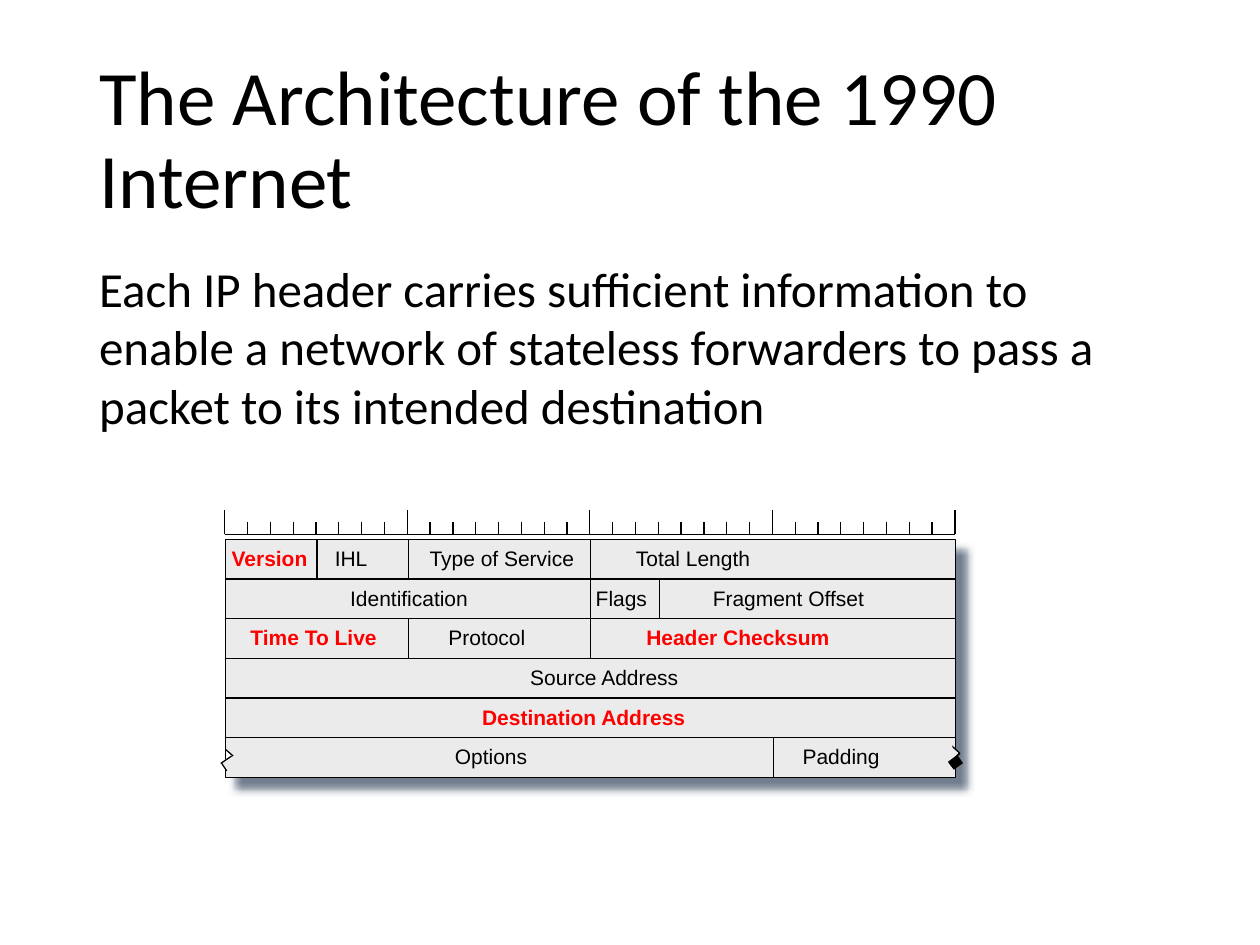
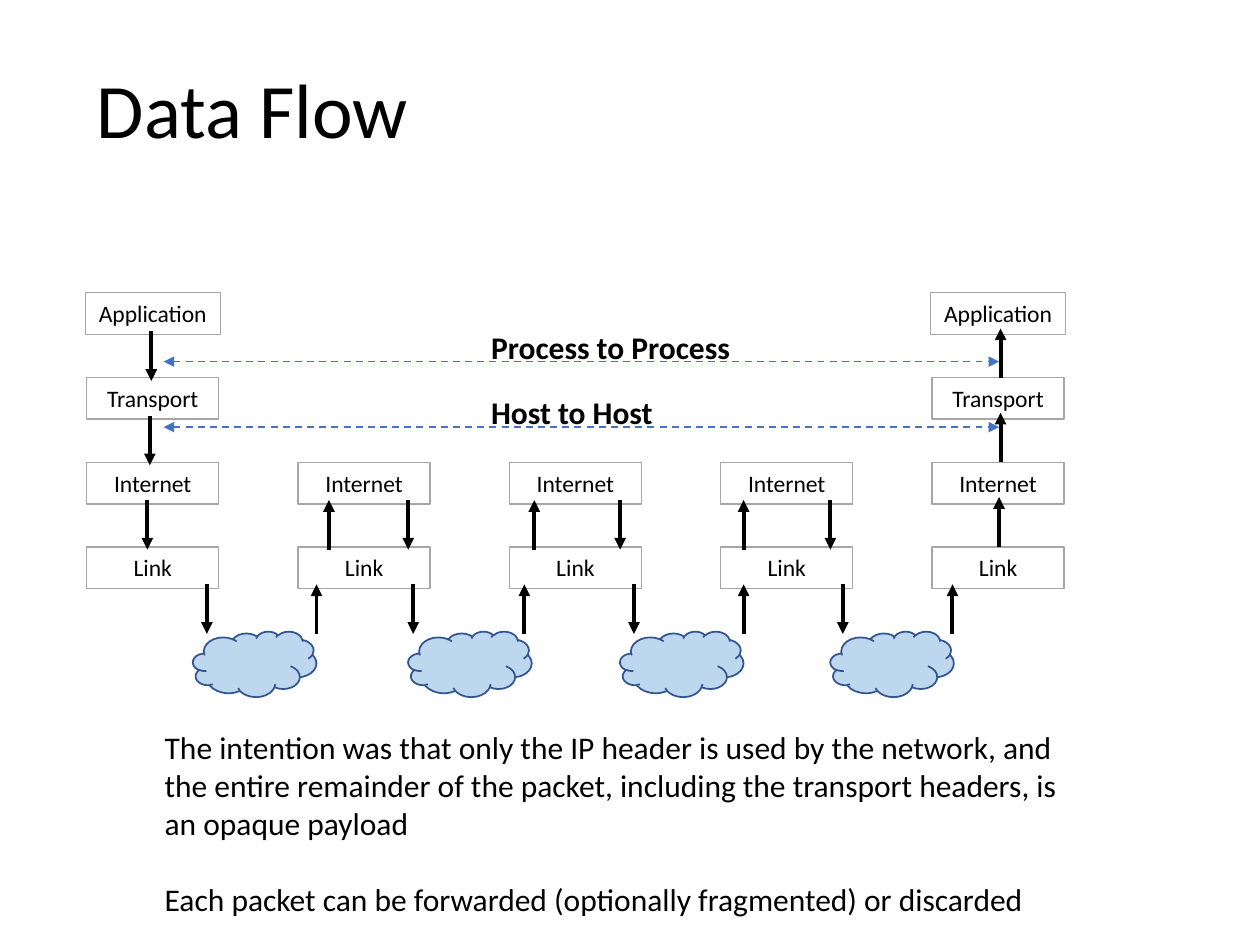
from dataclasses import dataclass

from lxml import etree
from pptx import Presentation
from pptx.dml.color import RGBColor
from pptx.enum.dml import MSO_LINE
from pptx.enum.shapes import MSO_CONNECTOR, MSO_SHAPE
from pptx.enum.text import MSO_ANCHOR, MSO_AUTO_SIZE, PP_ALIGN
from pptx.oxml.ns import qn
from pptx.util import Cm, Pt

RECT, CLOUD, WEDGE = MSO_SHAPE.RECTANGLE, MSO_SHAPE.CLOUD, MSO_SHAPE.RIGHT_TRIANGLE
STRAIGHT, DASH = MSO_CONNECTOR.STRAIGHT, MSO_LINE.DASH
LEFT, CENTER = PP_ALIGN.LEFT, PP_ALIGN.CENTER
TOP, MIDDLE = MSO_ANCHOR.TOP, MSO_ANCHOR.MIDDLE
FIXED, GROW = MSO_AUTO_SIZE.NONE, MSO_AUTO_SIZE.SHAPE_TO_FIT_TEXT
TITLE_ONLY = 5

BLACK, WHITE, RED = "000000", "FFFFFF", "FF0000"
GREY, EDGE, SLATE = "EBEBEB", "A6A6A6", "44546A"
BLUE, SKY, NAVY = "4472C4", "BDD7EE", "325491"
SANS, BODY = "Arial", "Calibri"

LEFT_X, TOP_Y, BIT, ROW = 4.55, 10.87, 0.46, 0.8
WORD = 32 * BIT
RULER_X, RULER_Y = 4.53, 10.77
STACK_X, STACK_STEP, LAYER_Y, LAYER_STEP = 1.75, 4.26, 5.9, 1.71


@dataclass(frozen=True)
class Field:
    text: str
    row: int
    x: float
    width: float
    key: bool = False


@dataclass(frozen=True)
class Wall:
    bit: int
    row: int
    span: int = 1


@dataclass(frozen=True)
class Patch:
    x: float
    y: float
    width: float
    height: float
    fill: str
    turn: float = 0
    line: str | None = None
    kind: int = RECT


@dataclass(frozen=True)
class Layer:
    name: str
    stacks: tuple[int, ...]
    width: float = 2.66


@dataclass(frozen=True)
class Hop:
    down: tuple[float, ...]
    up: tuple[float, ...]


@dataclass(frozen=True)
class Span:
    text: str
    y: float
    width: float


FIELDS = (
    Field("Version", 0, 4.42, 2.06, True),
    Field("IHL", 0, 6.5, 1.17),
    Field("Type of Service", 0, 8.41, 3.45),
    Field("Total Length", 0, 12.57, 2.84),
    Field("Identification", 1, 6.81, 2.9),
    Field("Flags", 1, 11.76, 1.55),
    Field("Fragment Offset", 1, 14.12, 3.58),
    Field("Time To Live", 2, 4.8, 3.1, True),
    Field("Protocol", 2, 8.79, 2.08),
    Field("Header Checksum", 2, 12.78, 4.22, True),
    Field("Source Address", 3, 10.44, 3.53),
    Field("Destination Address", 4, 9.47, 4.65, True),
    Field("Options", 5, 8.92, 1.98),
    Field("Padding", 5, 15.93, 2.08),
)
WALLS = (Wall(4, 0), Wall(8, 0), Wall(16, 0, 3), Wall(19, 1), Wall(8, 2), Wall(24, 5))
RIGHT_TEAR = (
    Patch(18.85, 14.99, 0.41, 0.41, GREY, 42.3, BLACK),
    Patch(18.64, 14.88, 0.56, 0.64, GREY),
    Patch(19.15, 15.27, 0.23, 0.2, BLACK, 324.6),
)
LEFT_TEAR = (
    Patch(4.5, 15.29, 0.23, 0.2, GREY, 324.6),
    Patch(4.47, 15.14, 0.18, 0.18, WHITE, 225, kind=WEDGE),
)
CUTS = (
    (19.35, 15.19, 19.13, 15.37, BLACK),
    (19.23, 15.49, 19.13, 15.37, BLACK),
    (4.57, 15.54, 4.47, 15.39, BLACK),
    (4.57, 15.14, 4.57, 15.32, WHITE),
    (4.67, 15.24, 4.45, 15.39, BLACK),
    (4.55, 15.11, 4.7, 15.24, BLACK),
)
LAYERS = (
    Layer("Application", (0, 4), 2.72),
    Layer("Transport", (0, 4)),
    Layer("Internet", (0, 1, 2, 3, 4)),
    Layer("Link", (0, 1, 2, 3, 4)),
)
HOPS = (
    Hop((3.05,), (20.17,)),
    Hop((3.02,), (20.17,)),
    Hop((2.97, 8.23, 12.5, 16.74), (6.63, 10.77, 14.99, 20.14)),
    Hop((4.17, 8.33, 12.78, 16.99), (6.38, 10.57, 14.99, 19.2)),
)
CLOUDS = (3.89, 8.23, 12.5, 16.74)
SPANS = (Span("Host to Host", 7.8, 3.81), Span("Process to Process", 6.48, 5.36))
NOTE = (
    "The intention was that only the IP header is used by the network, and the entire "
    "remainder of the packet, including the transport headers, is an opaque payload\n"
    "Each packet can be forwarded (optionally fragmented) or discarded"
)


def rgb(code: str) -> RGBColor:
    return RGBColor.from_string(code)


def write(shape, text: str, *, size: float, font: str = BODY, color: str = BLACK,
          bold: bool = False, align=LEFT, anchor=TOP, wrap: bool = True,
          fit=FIXED, leading: float = 1.0, after: float = 0) -> None:
    frame = shape.text_frame
    frame.text = text
    frame.word_wrap = wrap
    frame.auto_size = fit
    frame.vertical_anchor = anchor
    for para in frame.paragraphs:
        para.alignment = align
        para.line_spacing = leading
        para.space_before = Pt(0)
        para.space_after = Pt(after)
        for run in para.runs:
            run.font.name = font
            run.font.size = Pt(size)
            run.font.bold = bold
            run.font.color.rgb = rgb(color)


def label(slide, x: float, y: float, width: float, height: float, text: str, **style) -> None:
    box = slide.shapes.add_textbox(Cm(x), Cm(y), Cm(width), Cm(height))
    write(box, text, **style)


def block(slide, x: float, y: float, width: float, height: float, *, kind=RECT,
          fill: str | None = None, line: str | None = None, weight: float = 0.75,
          turn: float = 0):
    shape = slide.shapes.add_shape(kind, Cm(x), Cm(y), Cm(width), Cm(height))
    shape.shadow.inherit = False
    shape.rotation = turn
    if fill:
        shape.fill.solid()
        shape.fill.fore_color.rgb = rgb(fill)
    else:
        shape.fill.background()
    if line:
        shape.line.color.rgb = rgb(line)
        shape.line.width = Pt(weight)
    else:
        shape.line.fill.background()
    return shape


def cast(shape) -> None:
    effects = shape._element.spPr.find(qn("a:effectLst"))
    shade = etree.SubElement(effects, qn("a:outerShdw"), blurRad=str(Pt(5)),
                             dist=str(Pt(8.5)), dir="2700000", algn="ctr", rotWithShape="0")
    tint = etree.SubElement(shade, qn("a:srgbClr"), val=SLATE)
    etree.SubElement(tint, qn("a:alpha"), val="75000")


def rule(slide, x1: float, y1: float, x2: float, y2: float, *, color: str = BLACK,
         weight: float = 0.75, dash=None, ends: tuple[str, ...] = ()) -> None:
    line = slide.shapes.add_connector(STRAIGHT, Cm(x1), Cm(y1), Cm(x2), Cm(y2))
    line.line.color.rgb = rgb(color)
    line.line.width = Pt(weight)
    if dash:
        line.line.dash_style = dash
    for end in ends:
        etree.SubElement(line.line._get_or_add_ln(), qn(f"a:{end}"), type="triangle")
    etree.SubElement(line._element.spPr, qn("a:effectLst"))


def start(deck, text: str, x: float, y: float, height: float):
    slide = deck.slides.add_slide(deck.slide_layouts[TITLE_ONLY])
    title = slide.shapes.title
    title.left, title.top, title.width, title.height = Cm(x), Cm(y), Cm(21.9), Cm(height)
    write(title, text, size=44, anchor=MIDDLE, leading=0.9)
    return slide


def patch(slide, items: tuple[Patch, ...]) -> None:
    for item in items:
        block(slide, item.x, item.y, item.width, item.height, kind=item.kind,
              fill=item.fill, line=item.line, turn=item.turn)


def ruler(slide) -> None:
    rule(slide, RULER_X, RULER_Y, RULER_X + WORD, RULER_Y)
    for bit in range(33):
        x = RULER_X + bit * BIT
        tall = 0.48 if bit % 8 == 0 else 0.25
        if bit % 8 == 0 or bit < 32:
            rule(slide, x, RULER_Y, x, RULER_Y - tall)


def header(deck) -> None:
    slide = start(deck, "The Architecture of the 1990 Internet", 1.75, 1.02, 3.68)
    label(slide, 1.75, 5.08, 21.9, 12.09,
          "Each IP header carries sufficient information to enable a network of "
          "stateless forwarders to pass a packet to its intended destination", size=28)
    cast(block(slide, LEFT_X, TOP_Y, WORD, 6 * ROW, fill=GREY, line=BLACK))
    patch(slide, RIGHT_TEAR)
    for row in range(1, 6):
        y = TOP_Y + row * ROW
        rule(slide, LEFT_X, y, LEFT_X + WORD, y)
    for wall in WALLS:
        x, y = LEFT_X + wall.bit * BIT, TOP_Y + wall.row * ROW
        rule(slide, x, y, x, y + wall.span * ROW)
    for field in FIELDS:
        label(slide, field.x, TOP_Y + field.row * ROW, field.width, 0.76, field.text,
              size=12, font=SANS, color=RED if field.key else BLACK, bold=field.key,
              wrap=False, fit=GROW)
    ruler(slide)
    patch(slide, LEFT_TEAR)
    for *ends, color in CUTS:
        rule(slide, *ends, color=color)


def flow(deck) -> None:
    slide = start(deck, "Data Flow", 1.7, 0.91, 2.77)
    for level, layer in enumerate(LAYERS):
        for stack in layer.stacks:
            x = STACK_X + stack * STACK_STEP - (layer.width - 2.66) / 2
            box = block(slide, x, LAYER_Y + level * LAYER_STEP, layer.width, 0.84, line=EDGE)
            write(box, layer.name, size=13.5, align=CENTER, wrap=layer.width < 2.7, fit=GROW)
    for x in CLOUDS:
        block(slide, x, 12.73, 2.49, 1.32, kind=CLOUD, fill=SKY, line=NAVY, weight=1)
    for level, hop in enumerate(HOPS):
        y = 6.68 + level * 1.7
        for x in hop.down:
            rule(slide, x, y, x, y + 1, weight=2.25, ends=("tailEnd",))
        for x in hop.up:
            lift = 0.06 if x > 20 else 0
            rule(slide, x, y + 1 - lift, x, y - lift, weight=2.25, ends=("tailEnd",))
    for span in SPANS:
        label(slide, 9.65, span.y, span.width, 1.02, span.text, size=18, bold=True,
              wrap=False, fit=GROW)
        y = span.y + 0.81
        rule(slide, 3.3, y, 20.14, y, color=BLUE, weight=1, dash=DASH,
             ends=("headEnd", "tailEnd"))
    label(slide, 3.07, 14.55, 18.97, 4.11, NOTE, size=18, fit=GROW, after=22)


def main() -> None:
    deck = Presentation()
    deck.slide_width, deck.slide_height = Cm(25.4), Cm(19.05)
    header(deck)
    flow(deck)
    deck.save("out.pptx")


if __name__ == "__main__":
    main()
